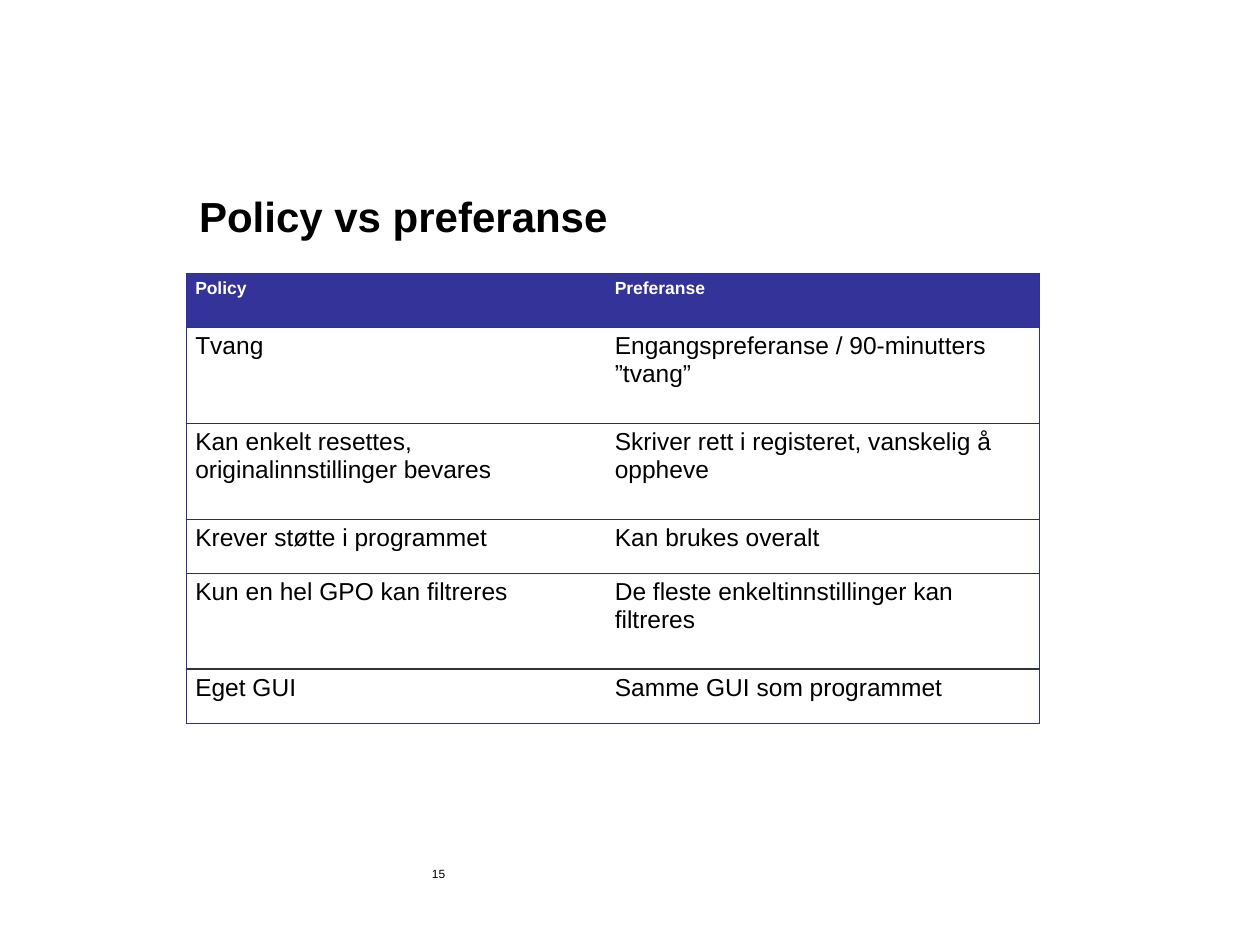
from dataclasses import dataclass

import pptx
import pptx.dml.color
import pptx.enum.text
import pptx.oxml
import pptx.oxml.ns
import pptx.util

Inches = pptx.util.Inches
Pt = pptx.util.Pt


def rgb(value):
    """Turn a hex string into a colour."""
    return pptx.dml.color.RGBColor.from_string(value)


@dataclass(frozen=True)
class Theme:
    """Colours, font and type sizes of the slide."""
    font: str = "Arial"
    ink: str = "000000"
    paper: str = "FFFFFF"
    header: str = "333399"
    frame: str = "2F2F98"
    rule: str = "333333"
    rule_width: float = 0.75
    title_size: float = 24
    header_size: float = 10
    body_size: float = 14
    number_size: float = 6.8


class SlideBuilder:
    """Holds the theme and the current slide."""

    def __init__(self, slide, theme):
        self.slide = slide
        self.theme = theme

    def set_text(self, frame, text, size, color, bold=False):
        """Fill a text frame with one formatted paragraph."""
        frame.word_wrap = True
        paragraph = frame.paragraphs[0]
        paragraph.text = text
        paragraph.alignment = pptx.enum.text.PP_ALIGN.LEFT
        paragraph.font.name = self.theme.font
        paragraph.font.size = Pt(size)
        paragraph.font.bold = bold
        paragraph.font.color.rgb = rgb(color)

    def title(self, text, left, top, width, height):
        """Place and format the title placeholder."""
        heading = self.slide.shapes.title
        heading.left, heading.top = Inches(left), Inches(top)
        heading.width, heading.height = Inches(width), Inches(height)
        heading.text_frame.vertical_anchor = pptx.enum.text.MSO_ANCHOR.MIDDLE
        self.set_text(heading.text_frame, text, self.theme.title_size, self.theme.ink, True)

    def page_number(self, text, left, top, width, height):
        """Add the page number."""
        box = self.slide.shapes.add_textbox(
            Inches(left), Inches(top), Inches(width), Inches(height))
        self.set_text(box.text_frame, text, self.theme.number_size, self.theme.ink)

    def border(self, cell, side, color):
        """Draw one cell edge, or hide it when the colour is None."""
        fill = f'<a:solidFill><a:srgbClr val="{color}"/></a:solidFill>' if color else "<a:noFill/>"
        cell._tc.get_or_add_tcPr().append(pptx.oxml.parse_xml(
            f'<a:ln{side} {pptx.oxml.ns.nsdecls("a")} w="{Pt(self.theme.rule_width)}">'
            f"{fill}</a:ln{side}>"))

    def table(self, rows, left, top, widths, heights):
        """Add a table with a filled header, a frame and row rules."""
        theme = self.theme
        last_row, last_column = len(rows) - 1, len(widths) - 1
        table = self.slide.shapes.add_table(
            len(rows), len(widths), Inches(left), Inches(top),
            Inches(sum(widths)), Inches(sum(heights))).table
        table.horz_banding = False
        for column, width in zip(table.columns, widths):
            column.width = Inches(width)
        for r, (texts, height) in enumerate(zip(rows, heights)):
            table.rows[r].height = Inches(height)
            is_header = r == 0
            for c, text in enumerate(texts):
                cell = table.cell(r, c)
                cell.margin_left = cell.margin_right = Inches(0.07)
                cell.margin_top = cell.margin_bottom = Inches(0.04)
                self.border(cell, "L", theme.frame if c == 0 else None)
                self.border(cell, "R", theme.frame if c == last_column else None)
                self.border(cell, "T", theme.frame if r <= 1 else theme.rule)
                self.border(cell, "B", theme.frame if r in (0, last_row) else theme.rule)
                cell.fill.solid()
                cell.fill.fore_color.rgb = rgb(theme.header if is_header else theme.paper)
                self.set_text(cell.text_frame, text,
                              theme.header_size if is_header else theme.body_size,
                              theme.paper if is_header else theme.ink, is_header)


def main():
    """Build and save the slide."""
    deck = pptx.Presentation()
    deck.slide_width, deck.slide_height = Inches(10), Inches(7.5)
    builder = SlideBuilder(deck.slides.add_slide(deck.slide_layouts[5]), Theme())
    builder.title("Policy vs preferanse", 1.48, 1.41, 6.31, 0.6)
    comparison = [
        ("Policy", "Preferanse"),
        ("Tvang", "Engangspreferanse / 90-minutters ”tvang”"),
        ("Kan enkelt resettes, originalinnstillinger bevares",
         "Skriver rett i registeret, vanskelig å oppheve"),
        ("Krever støtte i programmet", "Kan brukes overalt"),
        ("Kun en hel GPO kan filtreres", "De fleste enkeltinnstillinger kan filtreres"),
        ("Eget GUI", "Samme GUI som programmet"),
    ]
    short, tall = 0.43, 0.76
    builder.table(comparison, 1.48, 2.17, (3.33, 3.44),
                  (short, tall, tall, short, tall, short))
    builder.page_number("15", 3.33, 6.83, 5.25, 0.5)
    deck.save("out.pptx")


if __name__ == "__main__":
    main()
